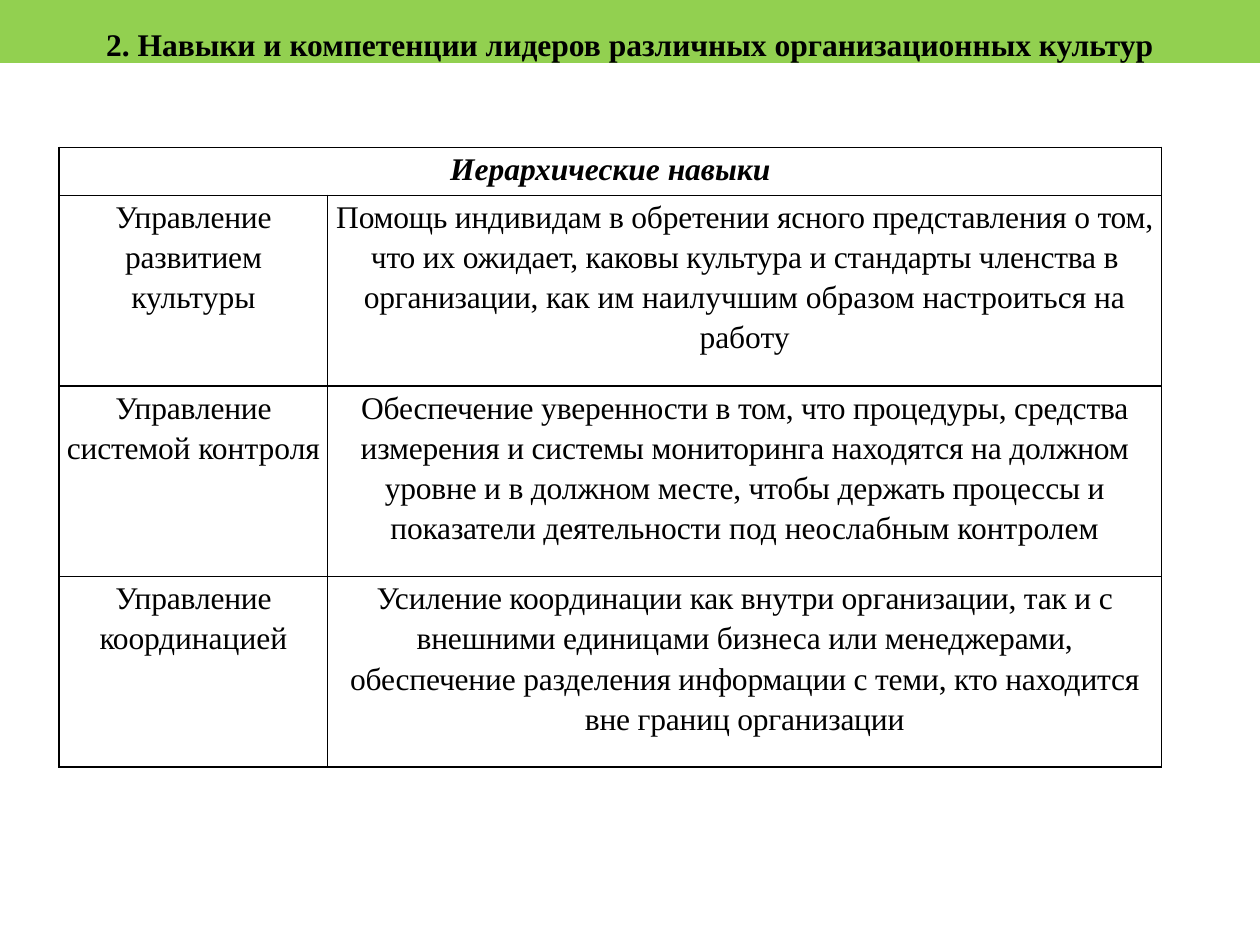
from dataclasses import dataclass

from lxml.etree import SubElement
from pptx import Presentation
from pptx.dml.color import RGBColor as RGB
from pptx.enum.shapes import MSO_SHAPE as SHAPE
from pptx.enum.text import MSO_ANCHOR as ANCHOR, PP_ALIGN as ALIGN
from pptx.oxml.ns import qn
from pptx.util import Inches, Pt


@dataclass(frozen=True)
class Theme:
    font: str = "Times New Roman"
    size: float = 18
    ink: str = "000000"
    paper: str = "FFFFFF"
    band: str = "92D050"
    border: float = 1
    tight: float = -0.1


T = Theme()
TITLE = "2. Навыки и компетенции лидеров различных организационных культур"
HEADING = "Иерархические навыки"
# Each cell holds a tightly spaced part and a normally spaced part.
SKILLS = [
    (("Управление развитием ", "культуры"),
     ("Помощь индивидам в обретении ясного представления о том, что их ожидает, "
      "каковы культура и стандарты членства в организации, как ",
      "им наилучшим образом настроиться на работу")),
    (("Управление системой ", "контроля"),
     ("Обеспечение уверенности в том, что процедуры, средства измерения и системы "
      "мониторинга находятся на должном уровне и в должном месте, чтобы держать "
      "процессы и показатели деятельно", "сти под неослабным контролем")),
    (("Управление коорди", "нацией"),
     ("Усиление координации как внутри организации, так и с внешними единицами "
      "бизнеса или менеджерами, обеспечение разделения информации с теми, кто "
      "находится вне границ организации", "")),
]


def add_run(p, text, bold=False, italic=False, spacing=0):
    r = p.add_run()
    r.text = text
    f = r.font
    f.name, f.size, f.bold, f.italic = T.font, Pt(T.size), bold, italic
    f.color.rgb = RGB.from_string(T.ink)
    if spacing:
        r._r.get_or_add_rPr().set("spc", str(round(spacing * 100)))


def center(p, line_spacing, after=0):
    p.alignment = ALIGN.CENTER
    p.line_spacing = line_spacing
    p.space_after = Pt(after)


def fill(obj, color):
    obj.fill.solid()
    obj.fill.fore_color.rgb = RGB.from_string(color)


def style_cell(cell):
    """Set margins, borders and fill; return the cell's paragraph."""
    cell.margin_left = cell.margin_right = Inches(0.03)
    cell.margin_top = cell.margin_bottom = 0
    tcPr = cell._tc.get_or_add_tcPr()
    for side in ("lnL", "lnR", "lnT", "lnB"):
        ln = SubElement(tcPr, qn(f"a:{side}"), w=str(Pt(T.border)))
        paint = SubElement(ln, qn("a:solidFill"))
        SubElement(paint, qn("a:srgbClr"), val=T.ink)
    fill(cell, T.paper)
    p = cell.text_frame.paragraphs[0]
    center(p, 1.15, after=10)
    return p


def add_title_band(slide, x, y, w, h):
    sp = slide.shapes.add_shape(SHAPE.RECTANGLE, x, y, w, h)
    sp.shadow.inherit = False
    fill(sp, T.band)
    sp.line.fill.background()
    tf = sp.text_frame
    tf.word_wrap = True
    tf.vertical_anchor = ANCHOR.TOP
    p = tf.paragraphs[0]
    center(p, 1.5)
    add_run(p, TITLE, bold=True)


def add_skills_table(slide, x, y, w, h):
    """Heading row across both columns, then equal rows of skill and description."""
    table = slide.shapes.add_table(len(SKILLS) + 1, 2, x, y, w, h).table
    table.first_row = table.horz_banding = False
    name_w, heading_h = Inches(2.13), Inches(0.38)
    table.columns[0].width, table.columns[1].width = name_w, w - name_w
    table.rows[0].height = heading_h
    for i in range(len(SKILLS)):
        table.rows[i + 1].height = (h - heading_h) // len(SKILLS)

    paragraphs = [[style_cell(cell) for cell in row.cells] for row in table.rows]
    table.cell(0, 0).merge(table.cell(0, 1))
    add_run(paragraphs[0][0], HEADING, bold=True, italic=True)
    for row, skill in zip(paragraphs[1:], SKILLS):
        for p, (tight, normal) in zip(row, skill):
            add_run(p, tight, spacing=T.tight)
            if normal:
                add_run(p, normal)


def main():
    prs = Presentation()
    prs.slide_width, prs.slide_height = Inches(10), Inches(7.5)
    slide = prs.slides.add_slide(prs.slide_layouts[6])
    add_title_band(slide, 0, 0, prs.slide_width, prs.slide_height // 15)
    add_skills_table(slide, Inches(0.47), Inches(1.17), Inches(8.75), Inches(4.92))
    prs.save("out.pptx")


if __name__ == "__main__":
    main()
